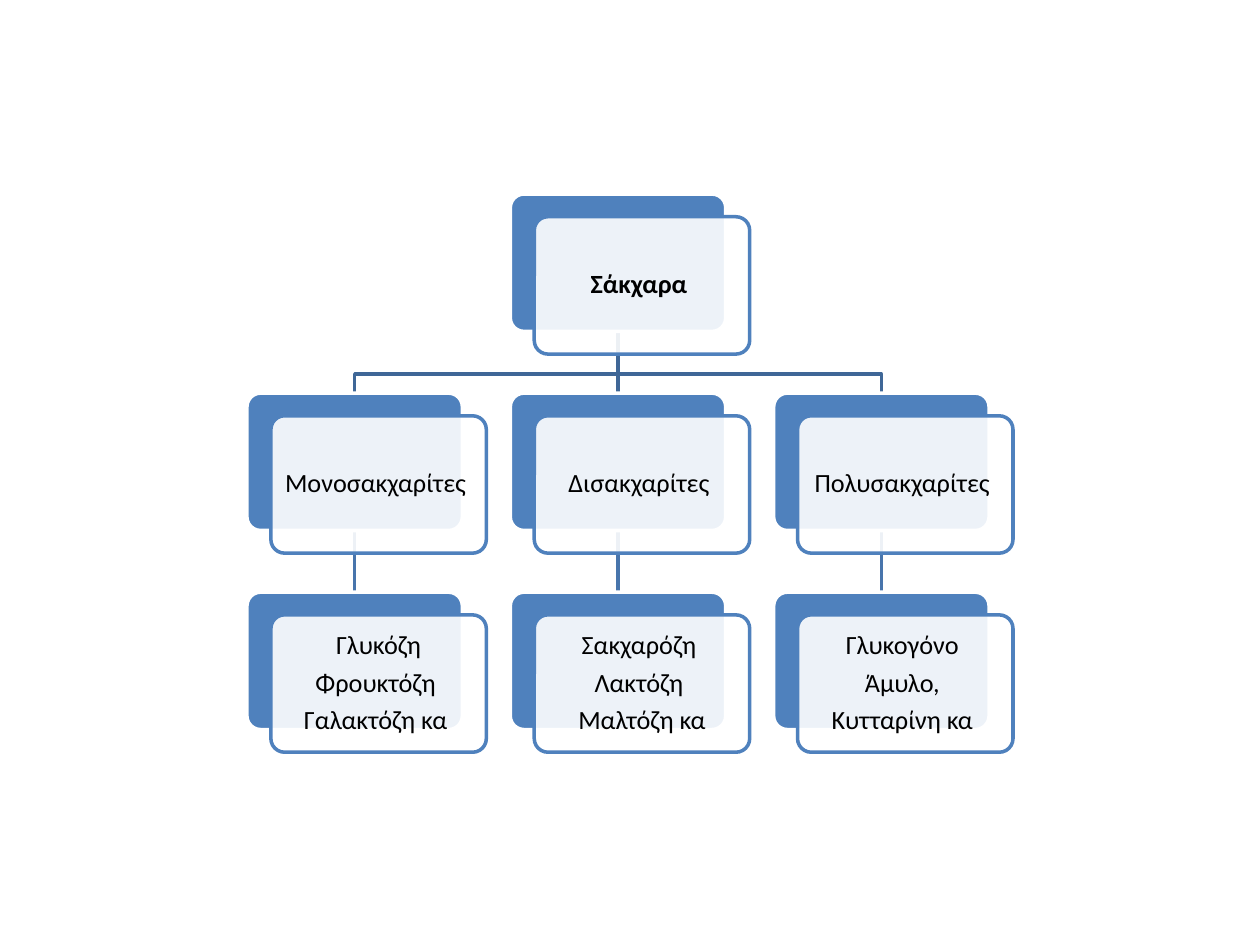
from lxml.etree import SubElement
from pptx import Presentation
from pptx.dml.color import RGBColor
from pptx.enum.shapes import MSO_CONNECTOR as Connector, MSO_SHAPE as Shape
from pptx.enum.text import MSO_ANCHOR as Anchor, PP_ALIGN as Align
from pptx.oxml.ns import qn
from pptx.util import Pt

PX = 9144
BLUE = RGBColor(0x4F, 0x81, 0xBD)
TRUNK_BLUE = RGBColor(0x3F, 0x67, 0x97)
BRANCH_BLUE = RGBColor(0x48, 0x75, 0xAC)
WHITE = RGBColor(0xFF, 0xFF, 0xFF)
BLACK = RGBColor(0, 0, 0)

CARD_W, CARD_H = 171, 109
FRONT_DX, FRONT_DY = 19, 18
COLUMN_STEP, ROW_STEP = 209, 158
ELBOW_DROP = 34

ROOT = "Σάκχαρα "
FAMILIES = [
    ("Μονοσακχαρίτες ", ["Γλυκόζη", "Φρουκτόζη ", "Γαλακτόζη κα "]),
    ("Δισακχαρίτες ", ["Σακχαρόζη ", "Λακτόζη ", "Μαλτόζη κα"]),
    ("Πολυσακχαρίτες ", ["Γλυκογόνο ", "Άμυλο, ", "Κυτταρίνη κα "]),
]


def apply(target, values):
    for key, value in values.items():
        setattr(target, key, value)


def add_panel(slide, left, top, fill, outline):
    panel = slide.shapes.add_shape(
        Shape.ROUNDED_RECTANGLE, left * PX, top * PX, CARD_W * PX, CARD_H * PX)
    panel.adjustments[0] = 0.1
    panel.shadow.inherit = False
    panel.fill.solid()
    panel.fill.fore_color.rgb = fill
    panel.line.color.rgb = outline
    panel.line.width = Pt(2)
    return panel


def add_card(slide, left, top, lines, bold=False):
    back = add_panel(slide, left, top, BLUE, WHITE)
    front = add_panel(slide, left + FRONT_DX, top + FRONT_DY, WHITE, BLUE)
    white = front.element.spPr.find(qn("a:solidFill")).find(qn("a:srgbClr"))
    SubElement(white, qn("a:alpha")).set("val", "90000")

    frame = front.text_frame
    apply(frame, dict(word_wrap=True, vertical_anchor=Anchor.MIDDLE,
                      margin_left=3 * PX, margin_right=3 * PX,
                      margin_top=3 * PX, margin_bottom=3 * PX))
    for index, line in enumerate(lines):
        paragraph = frame.add_paragraph() if index else frame.paragraphs[0]
        apply(paragraph, dict(text=line, alignment=Align.CENTER,
                              line_spacing=0.9, space_after=Pt(5.25)))
        apply(paragraph.font, dict(name="Calibri", size=Pt(15), bold=bold))
        paragraph.font.color.rgb = BLACK
    return back


def send_to_back(link, color):
    link.line.color.rgb = color
    link.line.width = Pt(2)
    link.element.getparent().insert(2, link.element)


def add_straight_link(slide, parent, child, color):
    link = slide.shapes.add_connector(Connector.STRAIGHT, 0, 0, 0, 0)
    link.begin_connect(parent, 2)
    link.end_connect(child, 0)
    SubElement(link.element.spPr, qn("a:effectLst"))
    send_to_back(link, color)


def add_elbow_link(slide, parent, child, color):
    start_x = parent.left + parent.width // 2
    start_y = parent.top + parent.height
    end_x = child.left + child.width // 2
    bend_y = start_y + ELBOW_DROP * PX
    builder = slide.shapes.build_freeform(start_x, start_y)
    builder.add_line_segments(
        [(start_x, bend_y), (end_x, bend_y), (end_x, child.top)], close=False)
    link = builder.convert_to_shape()
    link.fill.background()
    link.shadow.inherit = False
    send_to_back(link, color)


def add_sugar_tree(slide, left, top):
    root = add_card(slide, left + COLUMN_STEP, top, [ROOT], bold=True)
    for column, (family, sugars) in enumerate(FAMILIES):
        x = left + column * COLUMN_STEP
        family_card = add_card(slide, x, top + ROW_STEP, [family])
        sugars_card = add_card(slide, x, top + 2 * ROW_STEP, sugars)
        add_root_link = add_straight_link if column == 1 else add_elbow_link
        add_root_link(slide, root, family_card, TRUNK_BLUE)
        add_straight_link(slide, family_card, sugars_card, BRANCH_BLUE)


def main():
    deck = Presentation()
    apply(deck, dict(slide_width=1000 * PX, slide_height=750 * PX))
    slide = deck.slides.add_slide(deck.slide_layouts[6])
    add_sugar_tree(slide, 196, 154)
    deck.save("out.pptx")


if __name__ == "__main__":
    main()
